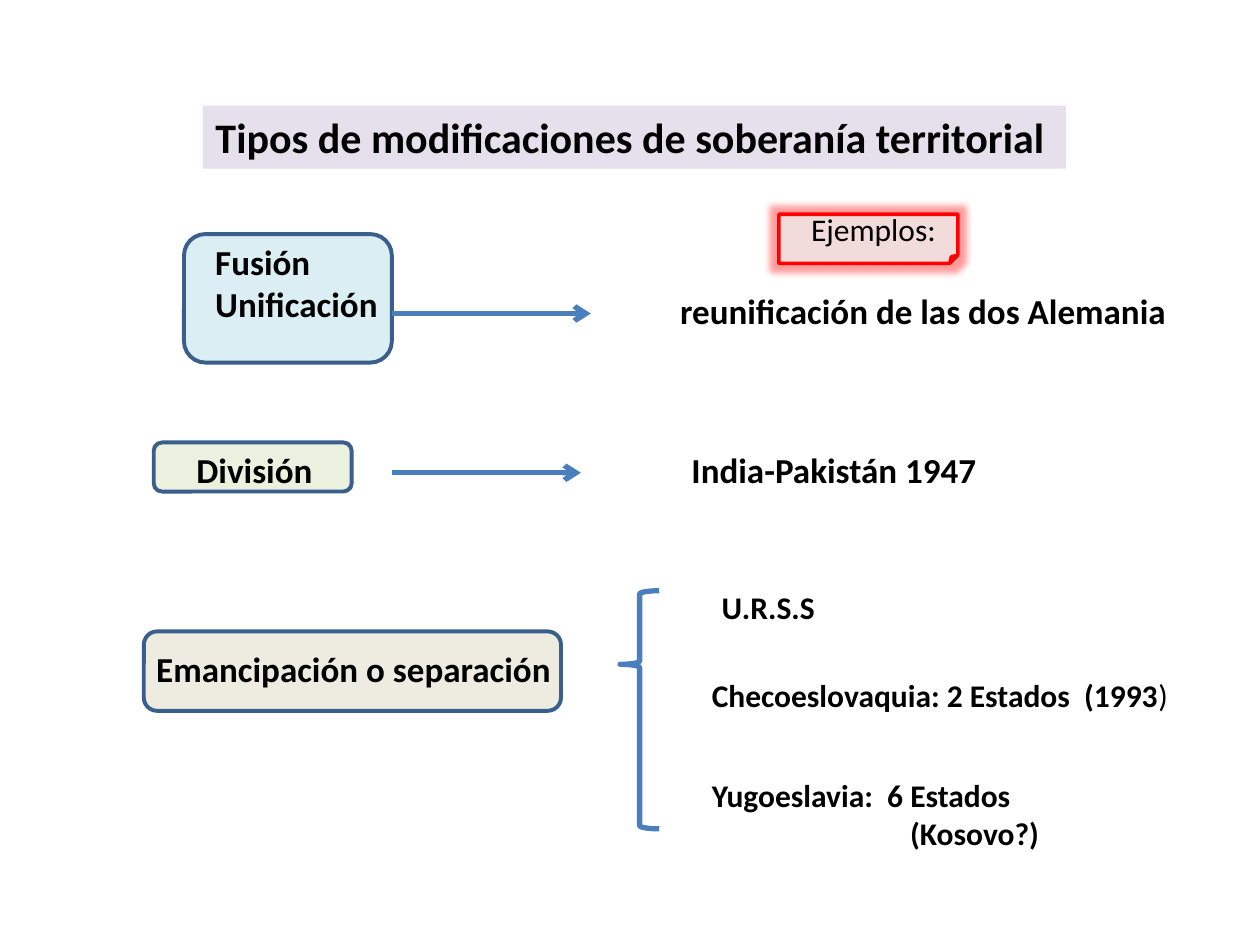
from lxml import etree
from pptx import Presentation
from pptx.dml.color import RGBColor
from pptx.enum.shapes import MSO_CONNECTOR, MSO_SHAPE
from pptx.enum.text import MSO_ANCHOR, MSO_AUTO_SIZE, PP_ALIGN
from pptx.oxml.ns import qn
from pptx.util import Cm, Pt

ROUND = MSO_SHAPE.ROUNDED_RECTANGLE
NOTE = MSO_SHAPE.FOLDED_CORNER
BRACE = MSO_SHAPE.LEFT_BRACE
STRAIGHT = MSO_CONNECTOR.STRAIGHT
LEFT = PP_ALIGN.LEFT
TOP = MSO_ANCHOR.TOP
FIXED = MSO_AUTO_SIZE.NONE

FONT = "Calibri"
BLACK = "000000"
NAVY = "3A5F8C"
BLUE = "4B7EBC"
RED = "FF0000"


def color(code):
    return RGBColor.from_string(code)


def place(shape, left, top, width, height):
    shape.left, shape.top = Cm(left), Cm(top)
    shape.width, shape.height = Cm(width), Cm(height)


def write(para, text, size=20, bold=True, indent=0):
    """Add one formatted run to a paragraph."""
    para.alignment = LEFT
    if indent:
        para._p.get_or_add_pPr().set("marL", str(Cm(indent)))
    run = para.add_run()
    run.text = text
    font = run.font
    font.name, font.size, font.bold = FONT, Pt(size), bold
    font.color.rgb = color(BLACK)


def add_text(slide, box, *lines, **style):
    """Add a text box with one paragraph per line."""
    frame = slide.shapes.add_textbox(*map(Cm, box)).text_frame
    frame.word_wrap = True
    frame.vertical_anchor = TOP
    for num, line in enumerate(lines):
        para = frame.add_paragraph() if num else frame.paragraphs[0]
        write(para, line, **style)
    return frame


def add_shape(slide, kind, box, line, width, fill=None):
    shape = slide.shapes.add_shape(kind, *map(Cm, box))
    shape.shadow.inherit = False
    if fill:
        shape.fill.solid()
        shape.fill.fore_color.rgb = color(fill)
    else:
        shape.fill.background()
    shape.line.color.rgb = color(line)
    shape.line.width = Pt(width)
    return shape


def add_glow(shape, code, size, alpha):
    effects = shape._element.spPr.find(qn("a:effectLst"))
    glow = etree.SubElement(effects, qn("a:glow"), rad=str(Pt(size)))
    tint = etree.SubElement(glow, qn("a:srgbClr"), val=code)
    etree.SubElement(tint, qn("a:alpha"), val=str(alpha * 1000))


def add_arrow(slide, start, end, level):
    arrow = slide.shapes.add_connector(
        STRAIGHT, Cm(start), Cm(level), Cm(end), Cm(level))
    arrow.line.color.rgb = color(BLUE)
    arrow.line.width = Pt(3)
    etree.SubElement(arrow.line._get_or_add_ln(), qn("a:tailEnd"), type="arrow")
    etree.SubElement(arrow._element.spPr, qn("a:effectLst"))


def add_title(slide, text):
    title = slide.shapes.title
    place(title, 4.09, 2.13, 17.4, 1.27)
    title.fill.solid()
    title.fill.fore_color.rgb = color("E6E0EC")
    title.text_frame.auto_size = FIXED
    write(title.text_frame.paragraphs[0], text, size=24)


def main():
    deck = Presentation()
    deck.slide_width, deck.slide_height = Cm(25.4), Cm(19.05)
    slide = deck.slides.add_slide(deck.slide_layouts[5])
    add_title(slide, "Tipos de modificaciones de soberanía territorial")

    # Heading of the examples
    note = add_shape(slide, NOTE, (15.7, 4.32, 3.61, 0.99), RED, 2, "F2DCDB")
    add_glow(note, RED, 8, 40)
    add_text(slide, (16.1, 4.11, 3.2, 1.02), "Ejemplos:", size=18, bold=False)

    # Types of change: box, fill, text box, lines
    types = [
        ((3.71, 4.72, 4.19, 2.59), "DBEEF4",
         (4.09, 4.72, 4, 1.96), ["Fusión", "Unificación"]),
        ((3.1, 8.92, 3.99, 0.99), "EBF1DE",
         (3.71, 8.92, 3.1, 1.12), ["División"]),
        ((2.9, 12.73, 8.41, 1.6), "EEECE1",
         (2.9, 12.93, 8.7, 1.12), ["Emancipación o separación"]),
    ]
    for box, fill, area, lines in types:
        add_shape(slide, ROUND, box, NAVY, 2.25, fill)
        add_text(slide, area, *lines)

    # Links from types to examples
    add_arrow(slide, 7.9, 11.91, 6.32)
    add_arrow(slide, 7.9, 11.71, 9.53)
    brace = add_shape(slide, BRACE, (12.5, 11.91, 0.79, 4.8), BLUE, 3)
    brace.adjustments[0] = 0.083
    brace.adjustments[1] = 0.309

    # Examples
    add_text(slide, (13.46, 5.72, 10.7, 1.12),
             "reunificación de las dos Alemania")
    add_text(slide, (13.69, 8.92, 6.5, 1.12), "India-Pakistán 1947")
    add_text(slide, (14.3, 11.73, 2.6, 1.02), "U.R.S.S", size=18)
    czech = add_text(slide, (14.1, 13.51, 10, 1.02),
                     "Checoeslovaquia: 2 Estados  (1993", size=18)
    write(czech.paragraphs[0], ")", size=18, bold=False)
    states = add_text(slide, (14.1, 15.52, 7.19, 1.8),
                      "Yugoeslavia:  6 Estados", size=18)
    write(states.add_paragraph(), "(Kosovo?)", size=18, indent=4)

    deck.save("out.pptx")


if __name__ == "__main__":
    main()
